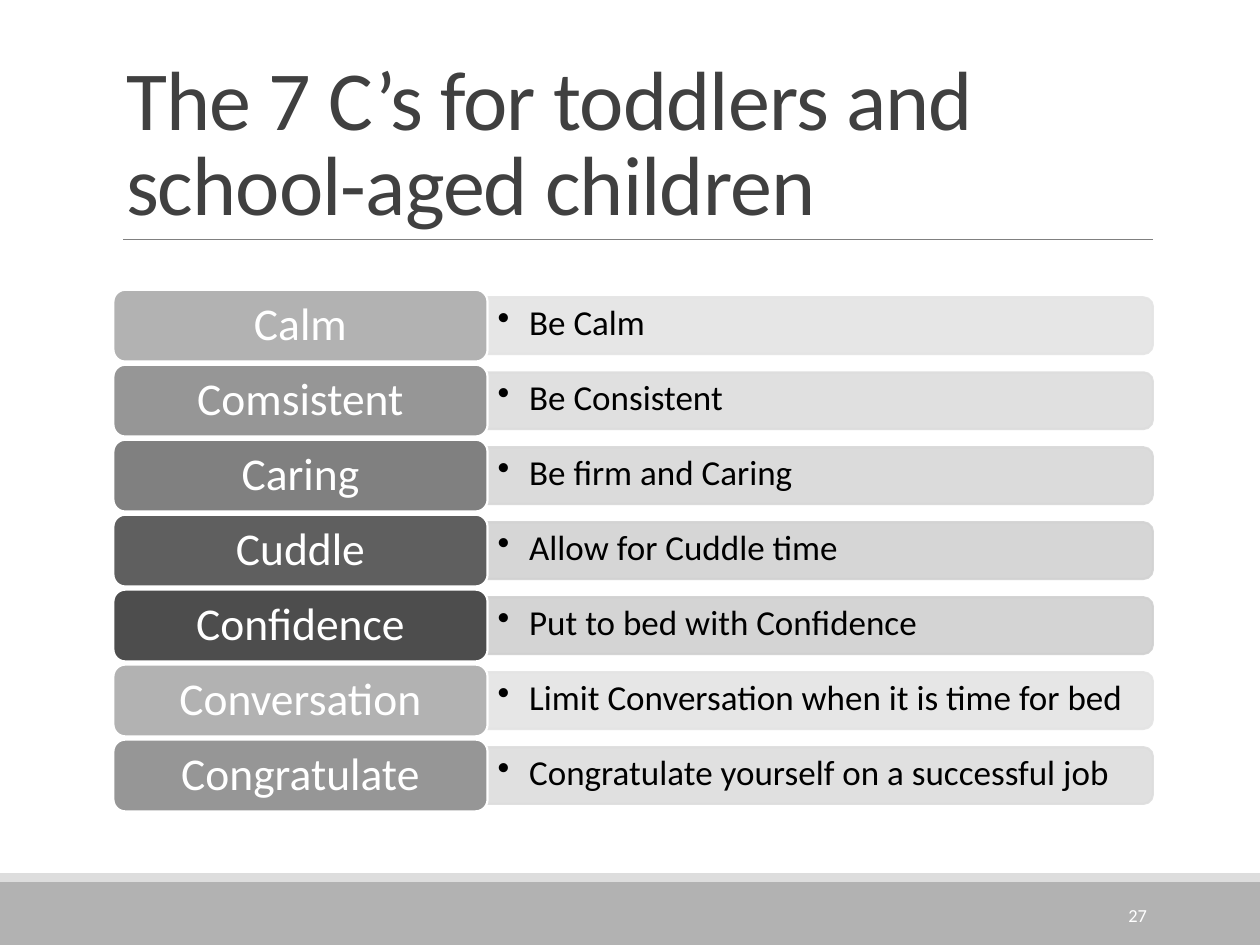
import pptx
import pptx.dml.color
import pptx.enum.shapes
import pptx.enum.text
import pptx.oxml.ns
import pptx.util
from lxml import etree

Inches = pptx.util.Inches
Pt = pptx.util.Pt
RGBColor = pptx.dml.color.RGBColor
Shape = pptx.enum.shapes.MSO_SHAPE
Anchor = pptx.enum.text.MSO_ANCHOR
Align = pptx.enum.text.PP_ALIGN
qn = pptx.oxml.ns.qn

COLORS = {
    "title": "404040", "rule": "808080", "footer": "B2B2B2", "strip": "DDDDDD",
    "white": "FFFFFF", "black": "000000",
    "label 1": "B2B2B2", "label 2": "969696", "label 3": "808080",
    "label 4": "5F5F5F", "label 5": "4D4D4D",
    "bar 1": "E4E4E4", "bar 2": "DDDDDD", "bar 3": "D8D8D8",
    "bar 4": "D2D2D2", "bar 5": "D0D0D0",
}
ROWS = [
    ("Calm", "Be Calm"),
    ("Comsistent", "Be Consistent"),
    ("Caring", "Be firm and Caring"),
    ("Cuddle", "Allow for Cuddle time"),
    ("Confidence", "Put to bed with Confidence"),
    ("Conversation", "Limit Conversation when it is time for bed"),
    ("Congratulate", "Congratulate yourself on a successful job"),
]


def add_block(kind, left, top, width, height, fill, line=None):
    block = page.shapes.add_shape(kind, Inches(left), Inches(top), Inches(width), Inches(height))
    block.shadow.inherit = False
    block.fill.solid()
    block.fill.fore_color.rgb = RGBColor.from_string(COLORS[fill])
    if line:
        block.line.color.rgb = RGBColor.from_string(COLORS[line])
        block.line.width = Pt(1.25)
    else:
        block.line.fill.background()
    return block


def write(box, text, size, color, align, anchor=Anchor.MIDDLE, spacing=0.9):
    frame = box.text_frame
    frame.word_wrap = True
    frame.auto_size = pptx.enum.text.MSO_AUTO_SIZE.NONE
    frame.vertical_anchor = anchor
    para = frame.paragraphs[0]
    para.text = text
    para.alignment = align
    para.line_spacing = spacing
    para.font.name = "Calibri"
    para.font.size = Pt(size)
    para.font.color.rgb = RGBColor.from_string(COLORS[color])
    return para


deck = pptx.Presentation()
deck.slide_width, deck.slide_height = Inches(10), Inches(7.5)
page = deck.slides.add_slide(deck.slide_layouts[5])

add_block(Shape.RECTANGLE, 0, 7, 10, 0.5, "footer")
add_block(Shape.RECTANGLE, 0, 6.93, 10, 0.07, "strip")

rule = page.shapes.add_connector(
    pptx.enum.shapes.MSO_CONNECTOR.STRAIGHT, Inches(0.98), Inches(1.9), Inches(9.15), Inches(1.9))
rule.line.color.rgb = RGBColor.from_string(COLORS["rule"])
rule.line.width = Pt(0.5)
etree.SubElement(rule._element.spPr, qn("a:effectLst"))

title = page.shapes.title
title.left, title.top, title.width, title.height = Inches(0.9), Inches(0.31), Inches(8.25), Inches(1.59)
para = write(title, "The 7 C’s for toddlers and school-aged children", 48, "title",
             Align.LEFT, Anchor.BOTTOM, 0.85)
para.runs[0].font._element.set("spc", "-50")

row_top, row_step, row_height = 2.3, 0.595, 0.57
bar_length, bar_height, bar_center = 5.28, 0.45, 6.51
for index, (label_text, advice) in enumerate(ROWS):
    top = row_top + index * row_step
    middle = top + row_height / 2
    shade = index % 5 + 1

    bar = add_block(Shape.ROUND_2_SAME_RECTANGLE, bar_center - bar_height / 2,
                    middle - bar_length / 2, bar_height, bar_length, f"bar {shade}", f"bar {shade}")
    bar.rotation = 90
    for color in bar._element.spPr.iter(qn("a:srgbClr")):
        etree.SubElement(color, qn("a:alpha"), val="90000")

    box = page.shapes.add_textbox(Inches(3.87), Inches(top + 0.07), Inches(5.26), Inches(0.41))
    frame = box.text_frame
    frame.margin_left = frame.margin_right = Inches(0.08)
    frame.margin_top = frame.margin_bottom = Inches(0.04)
    properties = frame.paragraphs[0]._p.get_or_add_pPr()
    properties.set("marL", str(Inches(0.25)))
    properties.set("indent", str(-Inches(0.25)))
    etree.SubElement(properties, qn("a:buChar"), char="•")
    write(box, advice, 20, "black", Align.LEFT)

    label = add_block(Shape.ROUNDED_RECTANGLE, 0.9, top, 2.97, row_height, f"label {shade}", "white")
    write(label, label_text, 26, "white", Align.CENTER)

number = page.shapes.add_textbox(Inches(8.12), Inches(7.06), Inches(1.08), Inches(0.4))
write(number, "27", 10.5, "white", Align.RIGHT, spacing=1.0)

deck.save("out.pptx")
